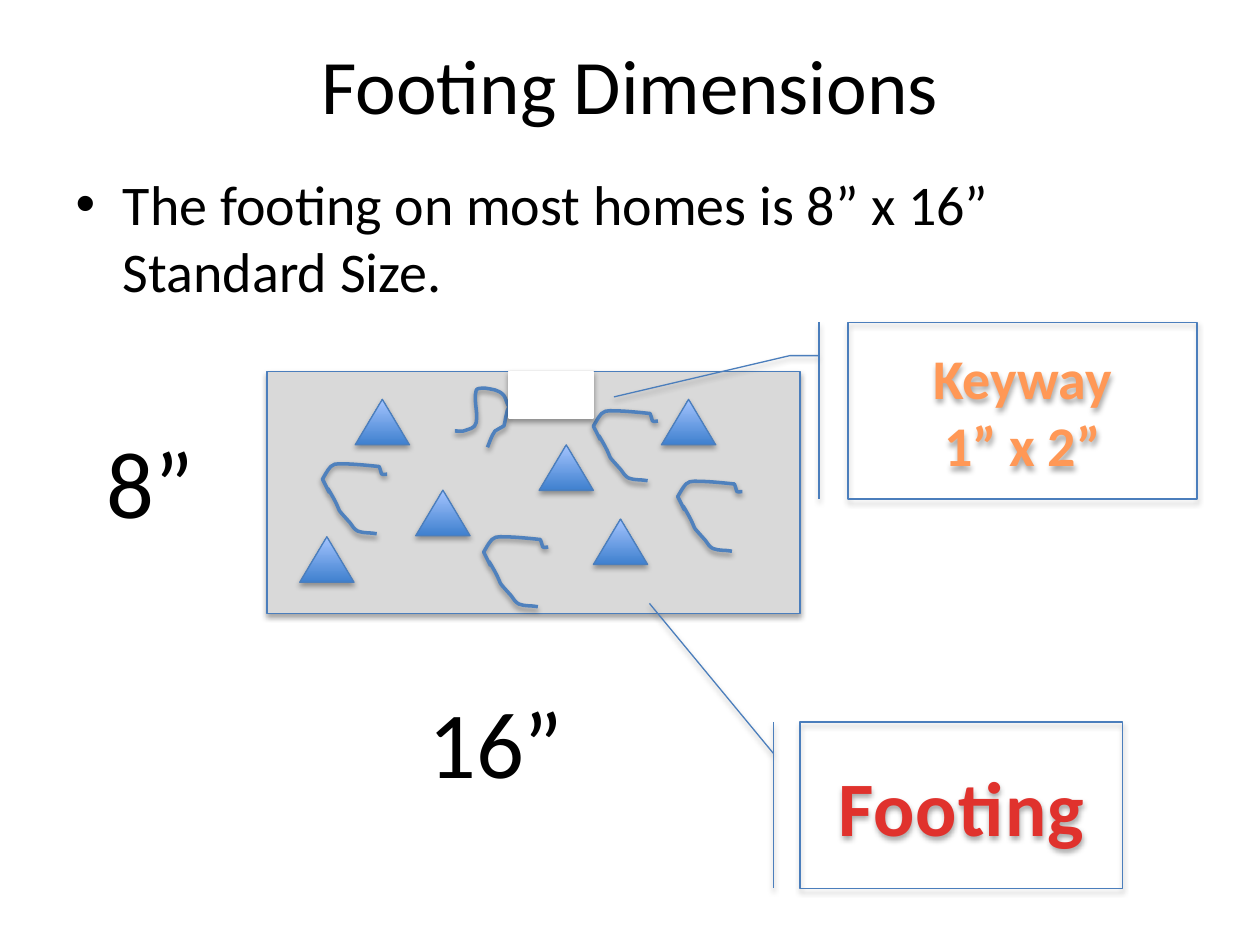
from lxml import etree
from pptx import Presentation
from pptx.dml.color import RGBColor
from pptx.enum.shapes import MSO_SHAPE
from pptx.enum.text import MSO_ANCHOR, PP_ALIGN
from pptx.oxml.ns import qn
from pptx.util import Pt

RECT, TRIANGLE = MSO_SHAPE.RECTANGLE, MSO_SHAPE.ISOSCELES_TRIANGLE
CALLOUT_1 = MSO_SHAPE.LINE_CALLOUT_1_BORDER_AND_ACCENT_BAR
CALLOUT_2 = MSO_SHAPE.LINE_CALLOUT_2_BORDER_AND_ACCENT_BAR
CENTER, MIDDLE = PP_ALIGN.CENTER, MSO_ANCHOR.MIDDLE

FONT = "Calibri"
COLORS = {
    "text": "000000", "concrete": "D9D9D9", "white": "FFFFFF",
    "edge": "4B7EBC", "curve": "4F81BD", "stone_dark": "3F80CE",
    "stone_light": "A4C4FF", "footing": "E0322D", "keyway": "FF9856",
}

STONE_SIZE = (31, 26)
STONES = [(50.4, 15.8), (225.4, 15.8), (155.5, 41.8),
          (18.7, 94.3), (85, 67.7), (186.5, 84.2)]
CHIPS = [(234.7, 62.6), (31.7, 52.6), (186.5, 22.3), (123.8, 94.3)]
CHIP_CURVE = [
    (31, 40), (27.4, 39.2), (23.8, 39.9), (20.2, 38.5),
    (18, 37.5), (17.1, 35.5), (15.8, 33.8),
    (6.3, 23.2), (11.7, 29.7), (6.3, 19.7),
    (-2.2, 4.5), (9.4, 27.5), (0, 8.8),
    (1.4, 6.5), (2.7, 3.8), (4.7, 1.6),
    (6, 0.2), (7.8, 0), (9.5, 0),
    (17.3, 0), (24.7, 0.8), (32.4, 1.6),
    (34.5, 7), (32.4, 6), (36.9, 6),
]
HOOK = (107.3, 9.4)
HOOK_CURVE = [
    (18.7, 33.8), (20.2, 30.2), (20.9, 27.4), (23, 24.5),
    (24.5, 23), (26.6, 23), (28.1, 21.6),
    (28.8, 19.4), (28.8, 17.3), (29.5, 15.1),
    (29.5, 13.7), (30.2, 12.2), (31, 10.8),
    (29.5, 8.6), (29.5, 6.5), (28.1, 4.3),
    (25.2, 0.7), (20.9, 0.7), (17.3, 0),
    (15.1, 0), (12.2, 0), (12.2, 1.4),
    (10.1, 7.9), (15.8, 20.9), (9.4, 23),
    (2.9, 25.2), (6.5, 24.5), (0, 24.5),
]


def rgb(name):
    """Return the named colour."""
    return RGBColor.from_string(COLORS[name])


def points(values):
    """Convert a sequence of numbers to point lengths."""
    return [Pt(v) for v in values]


def add_shadow(effects, alpha):
    """Put a soft downward shadow in an effect list."""
    shadow = etree.SubElement(
        effects, qn("a:outerShdw"), blurRad=str(Pt(3.1)), dist=str(Pt(1.8)),
        dir="5400000", algn="ctr", rotWithShape="0")
    color = etree.SubElement(shadow, qn("a:srgbClr"), val="000000")
    etree.SubElement(color, qn("a:alpha"), val=str(alpha * 1000))


def style_outline(sp, color, width, alpha=35):
    """Set the line and shadow of a shape."""
    sp.line.color.rgb = rgb(color)
    sp.line.width = Pt(width)
    sp.shadow.inherit = False
    add_shadow(sp._element.spPr.find(qn("a:effectLst")), alpha)


def style_paragraph(p, size, color="text", bold=False):
    """Set the font of a paragraph."""
    p.font.name, p.font.size, p.font.bold = FONT, Pt(size), bold
    p.font.color.rgb = rgb(color)


def fill_placeholder(sp, box, text, size):
    """Place a placeholder and write its text."""
    sp.left, sp.top, sp.width, sp.height = points(box)
    sp.text_frame.text = text
    style_paragraph(sp.text_frame.paragraphs[0], size)


def add_block(s, kind, box, fill, line="edge"):
    """Add a solid shape with an outline and shadow."""
    sp = s.shapes.add_shape(kind, *points(box))
    sp.fill.solid()
    sp.fill.fore_color.rgb = rgb(fill)
    style_outline(sp, line, 0.75)
    return sp


def add_stone(s, box):
    """Add a triangular stone, dark at the bottom."""
    sp = add_block(s, TRIANGLE, box, "stone_dark")
    sp.fill.gradient()
    sp.fill.gradient_angle = 90
    for stop, position, name in zip(sp.fill.gradient_stops, (0, 1),
                                    ("stone_dark", "stone_light")):
        stop.position = position
        stop.color.rgb = rgb(name)


def add_curve(s, left, top, curve):
    """Draw an open Bezier curve from a start point and point triples."""
    start, *rest = [points(xy) for xy in curve]
    builder = s.shapes.build_freeform(*start)
    builder.add_line_segments(rest, close=False)
    sp = builder.convert_to_shape(Pt(left), Pt(top))
    outline = sp._element.find(".//" + qn("a:path"))
    lines = outline.findall(qn("a:lnTo"))
    for i in range(0, len(lines), 3):
        bezier = etree.SubElement(outline, qn("a:cubicBezTo"))
        for line in lines[i:i + 3]:
            bezier.append(line[0])
            outline.remove(line)
    sp.fill.background()
    style_outline(sp, "curve", 2, 38)


def add_footing(s, left, top, width, height):
    """Draw the concrete section with its stones, chips and keyway."""
    add_block(s, RECT, (left, top, width, height), "concrete")
    for x, y in STONES:
        add_stone(s, (left + x, top + y, *STONE_SIZE))
    add_curve(s, left + HOOK[0], top + HOOK[1], HOOK_CURVE)
    for x, y in CHIPS:
        add_curve(s, left + x, top + y, CHIP_CURVE)
    add_block(s, RECT, (left + 138.2, top, 48.2, 26.6), "white", "white")


def add_dimension(s, box, text):
    """Add a large dimension label."""
    tf = s.shapes.add_textbox(*points(box)).text_frame
    tf.word_wrap = True
    tf.text = text
    style_paragraph(tf.paragraphs[0], 54)


def add_callout(s, kind, box, adjustments, text, size, color, spacing=0):
    """Add a bordered callout with bold, shadowed text."""
    sp = s.shapes.add_shape(kind, *points(box))
    for i, value in enumerate(adjustments):
        sp.adjustments[i] = value
    sp.fill.background()
    style_outline(sp, "edge", 0.75)
    tf = sp.text_frame
    tf.vertical_anchor = MIDDLE
    tf.text = text
    for p in tf.paragraphs:
        p.alignment = CENTER
        style_paragraph(p, size, color, True)
        r_pr = p.runs[0].font._element
        r_pr.set("spc", str(int(spacing * 100)))
        add_shadow(etree.SubElement(r_pr, qn("a:effectLst")), 40)


def main():
    """Build and save the slide."""
    prs = Presentation()
    prs.slide_width, prs.slide_height = Pt(720), Pt(540)
    s = prs.slides.add_slide(prs.slide_layouts[1])
    title, body = s.placeholders
    fill_placeholder(title, (36, 3, 648, 90), "Footing Dimensions", 44)
    fill_placeholder(body, (36, 93, 648, 356.4),
                     "The footing on most homes is 8” x 16” Standard Size.", 32)
    add_footing(s, 152.6, 212.4, 304.6, 138.2)
    add_dimension(s, (54, 239, 72, 72.7), "8”")
    add_dimension(s, (237.6, 387.4, 186.5, 72.7), "16”")
    add_callout(s, CALLOUT_1, (457.2, 412.6, 184.3, 95),
                (0.188, -0.083, -0.714, -0.467), "Footing", 44, "footing", 0.5)
    add_callout(s, CALLOUT_2, (484.6, 184.3, 199.4, 100.8),
                (0.188, -0.083, 0.188, -0.167, 0.422, -0.671),
                "Keyway\n1” x 2”", 32, "keyway")
    prs.save("out.pptx")


if __name__ == "__main__":
    main()
